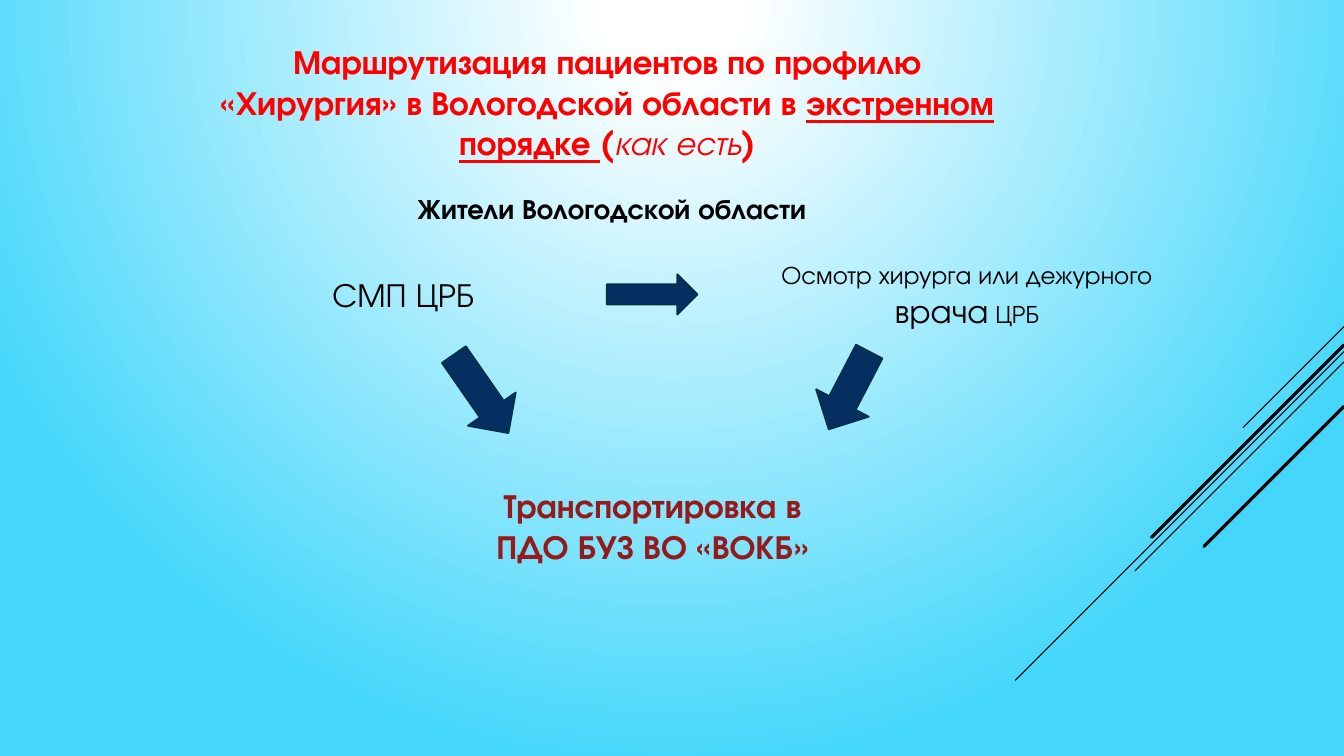
from dataclasses import dataclass

from lxml.etree import SubElement
from pptx import Presentation
from pptx.dml.color import RGBColor
from pptx.enum.shapes import MSO_CONNECTOR, MSO_SHAPE
from pptx.enum.text import MSO_ANCHOR, MSO_AUTO_SIZE, PP_ALIGN
from pptx.oxml.ns import qn
from pptx.slide import Slide
from pptx.text.text import TextFrame
from pptx.util import Cm, Pt


@dataclass(frozen=True)
class Theme:
    font: str = "TeX Gyre Adventor"
    black: str = "000000"
    red: str = "FF0000"
    maroon: str = "941A1B"
    navy: str = "052F61"
    navy_edge: str = "043148"
    glow: str = "FFFFFF"
    sky: str = "45D7FB"
    large: int = 24
    medium: int = 20
    small: int = 18
    arrow_line: float = 1.25
    thin: float = 0.75
    thick: float = 2.25


@dataclass(frozen=True)
class Box:
    left: float
    top: float
    width: float
    height: float

    def lengths(self) -> tuple[Cm, Cm, Cm, Cm]:
        return Cm(self.left), Cm(self.top), Cm(self.width), Cm(self.height)


@dataclass(frozen=True)
class Span:
    text: str
    size: int
    color: str
    bold: bool = False
    italic: bool = False
    underline: bool = False


@dataclass(frozen=True)
class Label:
    box: Box
    spans: tuple[Span, ...]
    align: PP_ALIGN = PP_ALIGN.CENTER
    anchor: MSO_ANCHOR = MSO_ANCHOR.MIDDLE


@dataclass(frozen=True)
class Arrow:
    box: Box
    rotation: float = 0


@dataclass(frozen=True)
class Stripe:
    top: float
    reach: float
    weight: float


THEME = Theme()
SLIDE_WIDTH, SLIDE_HEIGHT = 33.87, 19.05

TITLE = Label(
    Box(5.16, 0.91, 20.29, 3.33),
    (
        Span("Маршрутизация пациентов по профилю «Хирургия» в Вологодской области в ",
             THEME.large, THEME.red, bold=True),
        Span("экстренном порядке ", THEME.large, THEME.red, bold=True, underline=True),
        Span("(", THEME.large, THEME.red, bold=True),
        Span("как есть", THEME.large, THEME.red, italic=True),
        Span(")", THEME.large, THEME.red, bold=True),
    ),
    anchor=MSO_ANCHOR.TOP,
)
LABELS = (
    Label(Box(10.26, 4.7, 11.63, 1.88),
          (Span("Жители Вологодской области", THEME.medium, THEME.black, bold=True),),
          PP_ALIGN.LEFT, MSO_ANCHOR.TOP),
    Label(Box(7.85, 6.78, 4.62, 1.27), (Span("СМП ЦРБ", THEME.large, THEME.black),)),
    Label(Box(19.43, 6.4, 9.88, 2.06), (
        Span("Осмотр хирурга или дежурного ", THEME.small, THEME.black),
        Span("врача", THEME.large, THEME.black),
        Span(" ЦРБ", THEME.small, THEME.black),
    )),
    Label(Box(11.68, 12.09, 9.53, 2.31),
          (Span("Транспортировка в ПДО БУЗ ВО «ВОКБ»", THEME.large, THEME.maroon, bold=True),)),
)
ARROWS = (
    Arrow(Box(15.29, 6.91, 2.29, 1.02)),
    Arrow(Box(10.92, 9.19, 2.41, 1.47), 55.2),
    Arrow(Box(20.29, 9.09, 2.21, 1.5), 117.5),
)
STRIPES = (
    Stripe(8.23, 2.54, THEME.thin),
    Stripe(8.86, 8.28, THEME.thin),
    Stripe(9.12, 5.27, THEME.thin),
    Stripe(8.69, 4.85, THEME.thick),
    Stripe(10.24, 3.53, THEME.thick),
)


def paint_background(s: Slide) -> None:
    fill = s.background.fill
    fill.gradient()
    for stop, position, color in zip(fill.gradient_stops, (0.09, 1), (THEME.glow, THEME.sky)):
        stop.position = position
        stop.color.rgb = RGBColor.from_string(color)
    grad = s.background._cSld.find(".//" + qn("a:gradFill"))
    grad.remove(grad.find(qn("a:lin")))
    circle = SubElement(grad, qn("a:path"), {"path": "circle"})
    SubElement(circle, qn("a:fillToRect"), {"b": "100000"})


def draw_stripe(s: Slide, stripe: Stripe) -> None:
    line = s.shapes.add_connector(
        MSO_CONNECTOR.STRAIGHT, Cm(SLIDE_WIDTH), Cm(stripe.top),
        Cm(SLIDE_WIDTH - stripe.reach), Cm(stripe.top + stripe.reach))
    line.line.color.rgb = RGBColor.from_string(THEME.black)
    line.line.width = Pt(stripe.weight)
    line.line._get_or_add_ln().set("cap", "rnd")
    SubElement(line._element.spPr, qn("a:effectLst"))


def write_label(tf: TextFrame, label: Label) -> None:
    tf.word_wrap = True
    tf.auto_size = MSO_AUTO_SIZE.NONE
    tf.vertical_anchor = label.anchor
    p = tf.paragraphs[0]
    p.alignment = label.align
    for span in label.spans:
        r = p.add_run()
        r.text = span.text
        r.font.name = THEME.font
        r.font.size = Pt(span.size)
        r.font.color.rgb = RGBColor.from_string(span.color)
        r.font.bold = span.bold
        r.font.italic = span.italic
        r.font.underline = span.underline


def draw_title(s: Slide, label: Label) -> None:
    sp = s.shapes.title
    sp.left, sp.top, sp.width, sp.height = label.box.lengths()
    write_label(sp.text_frame, label)


def draw_label(s: Slide, label: Label) -> None:
    write_label(s.shapes.add_textbox(*label.box.lengths()).text_frame, label)


def draw_arrow(s: Slide, arrow: Arrow) -> None:
    sp = s.shapes.add_shape(MSO_SHAPE.RIGHT_ARROW, *arrow.box.lengths())
    sp.rotation = arrow.rotation
    sp.shadow.inherit = False
    sp.fill.solid()
    sp.fill.fore_color.rgb = RGBColor.from_string(THEME.navy)
    sp.line.color.rgb = RGBColor.from_string(THEME.navy_edge)
    sp.line.width = Pt(THEME.arrow_line)


def main() -> None:
    prs = Presentation()
    prs.slide_width, prs.slide_height = Cm(SLIDE_WIDTH), Cm(SLIDE_HEIGHT)
    s = prs.slides.add_slide(prs.slide_layouts[5])
    paint_background(s)
    for stripe in STRIPES:
        draw_stripe(s, stripe)
    draw_title(s, TITLE)
    for label in LABELS:
        draw_label(s, label)
    for arrow in ARROWS:
        draw_arrow(s, arrow)
    prs.save("out.pptx")


if __name__ == "__main__":
    main()
